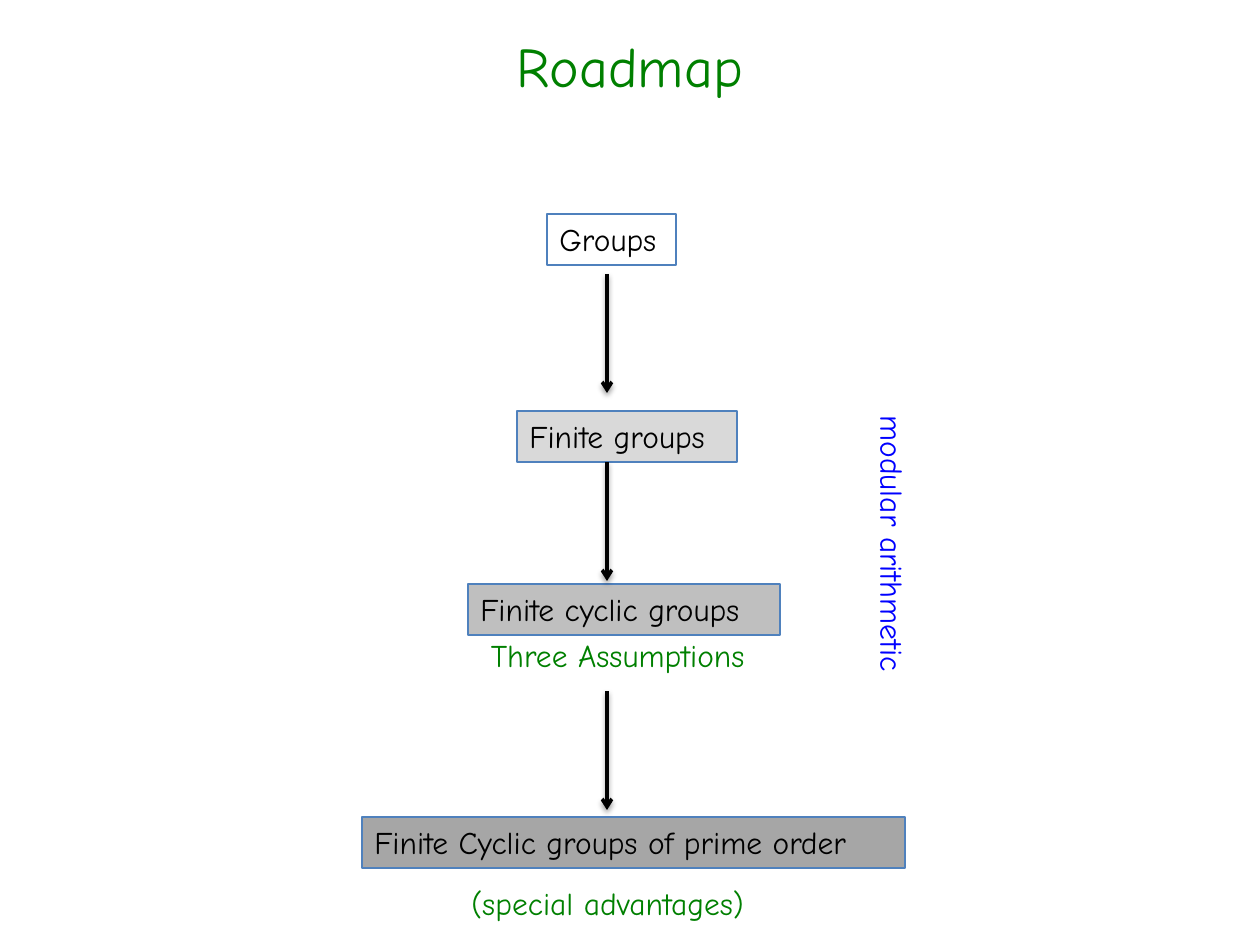
"""Build the Roadmap slide: a chain of group types joined by arrows."""
from lxml import etree
from pptx import Presentation
from pptx.dml.color import RGBColor
from pptx.enum.shapes import MSO_CONNECTOR, MSO_SHAPE
from pptx.enum.text import MSO_ANCHOR, PP_ALIGN
from pptx.oxml import parse_xml
from pptx.oxml.ns import qn
from pptx.util import Emu, Pt

RECT, STRAIGHT = MSO_SHAPE.RECTANGLE, MSO_CONNECTOR.STRAIGHT
LEFT, CENTER = PP_ALIGN.LEFT, PP_ALIGN.CENTER
TOP, MIDDLE = MSO_ANCHOR.TOP, MSO_ANCHOR.MIDDLE
THEME = {
    "font": "Comic Neue", "title": 32, "body": 18,
    "ink": "000000", "note": "008000", "side": "0000FF", "border": "4F81BD",
}
SHADOW = (
    '<a:effectLst xmlns:a="http://schemas.openxmlformats.org/drawingml/2006/main">'
    '<a:outerShdw blurRad="40000" dist="20000" dir="5400000" rotWithShape="0">'
    '<a:srgbClr val="000000"><a:alpha val="38000"/></a:srgbClr>'
    '</a:outerShdw></a:effectLst>'
)


def px(n):
    return Emu(round(n * 914400 / 126))


def write(sp, text, color, size=THEME["body"], align=LEFT, anchor=TOP):
    tf = sp.text_frame
    tf.word_wrap = True
    tf.vertical_anchor = anchor
    tf.text = text
    p = tf.paragraphs[0]
    p.alignment = align
    r = p.runs[0]
    r.font.name = THEME["font"]
    r.font.size = Pt(size)
    r.font.color.rgb = RGBColor.from_string(color)


prs = Presentation()
prs.slide_width, prs.slide_height = px(1260), px(945)
s = prs.slides.add_slide(prs.slide_layouts[6])

title = s.shapes.add_textbox(px(63), px(-14), px(1134), px(158))
write(title, "Roadmap", THEME["note"], THEME["title"], CENTER, MIDDLE)

for text, x, y, w, fill in [
    ("Groups", 547, 214, 129, "FFFFFF"),
    ("Finite groups", 517, 411, 220, "D9D9D9"),
    ("Finite cyclic groups", 468, 584, 312, "BFBFBF"),
    ("Finite Cyclic groups of prime order", 362, 817, 543, "A6A6A6"),
]:
    sp = s.shapes.add_shape(RECT, px(x), px(y), px(w), px(51))
    sp.shadow.inherit = False
    sp.fill.solid()
    sp.fill.fore_color.rgb = RGBColor.from_string(fill)
    sp.line.color.rgb = RGBColor.from_string(THEME["border"])
    sp.line.width = Pt(0.75)
    write(sp, text, THEME["ink"])

for text, x, y, w, color, align, turn in [
    ("Three Assumptions ", 459, 630, 328, THEME["note"], CENTER, 0),
    ("(special advantages)", 459, 878, 328, THEME["note"], LEFT, 0),
    ("modular arithmetic", 738, 532, 309, THEME["side"], LEFT, 90),
]:
    sp = s.shapes.add_textbox(px(x), px(y), px(w), px(51))
    sp.rotation = turn
    write(sp, text, color, align=align)

for y in (274, 462, 691):
    arrow = s.shapes.add_connector(STRAIGHT, px(607), px(y), px(607), px(y + 119))
    arrow.line.color.rgb = RGBColor.from_string(THEME["ink"])
    arrow.line.width = Pt(2)
    etree.SubElement(arrow.line._get_or_add_ln(), qn("a:tailEnd"), type="arrow")
    arrow._element.spPr.append(parse_xml(SHADOW))

prs.save("out.pptx")
